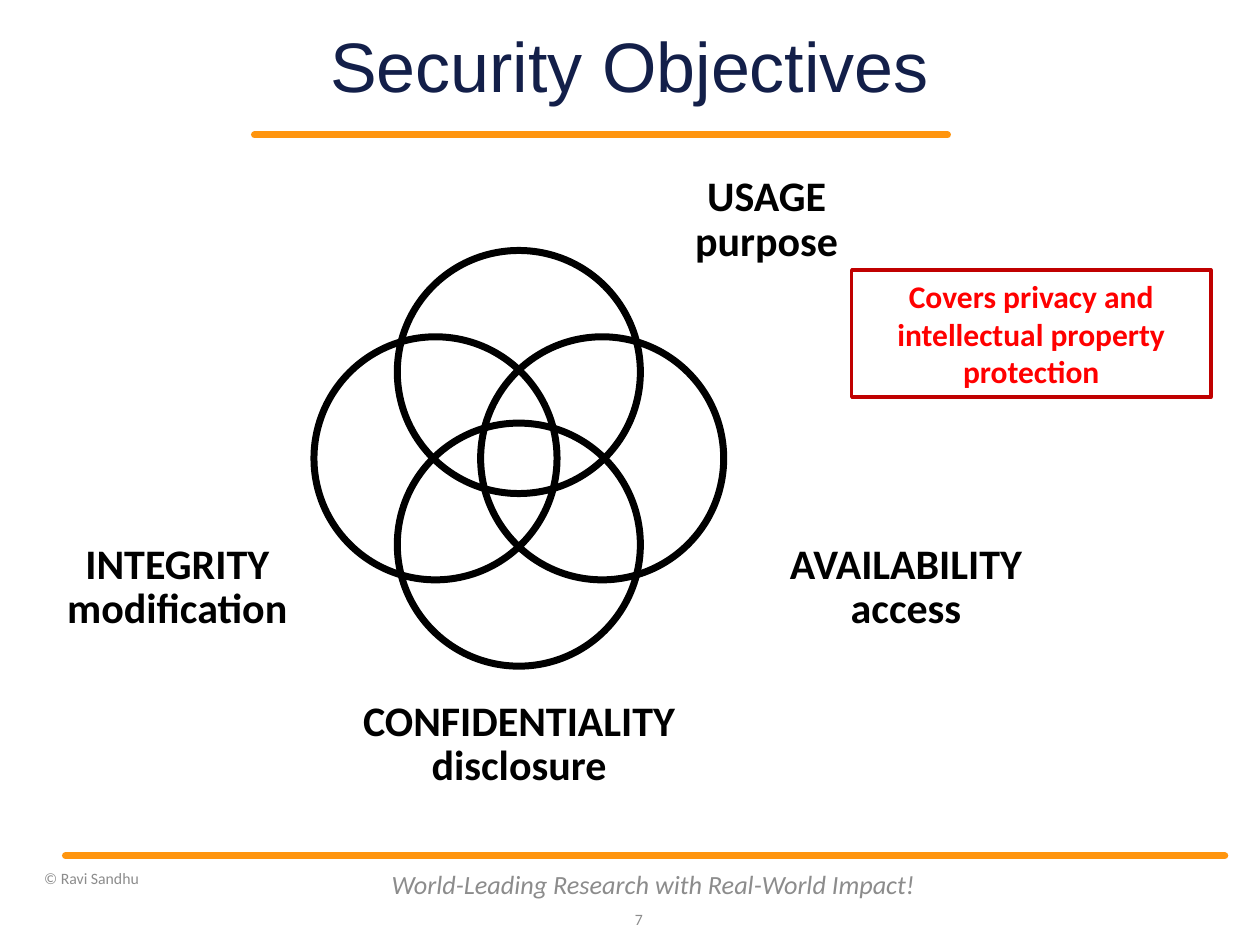
from dataclasses import dataclass

from lxml.etree import SubElement
from pptx import Presentation
from pptx.dml.color import RGBColor as Color
from pptx.enum.shapes import MSO_CONNECTOR as Connector, MSO_SHAPE as Shape
from pptx.enum.text import MSO_ANCHOR as Anchor, PP_ALIGN as Align
from pptx.oxml.ns import qn
from pptx.util import Cm, Pt


@dataclass(frozen=True)
class Theme:
    navy: str = "131F49"
    orange: str = "FF950E"
    grey: str = "8C8C8C"
    black: str = "000000"
    red: str = "FF0000"
    border: str = "C00000"
    heading: str = "Arial"
    body: str = "Calibri"
    title_size: int = 40
    label_size: int = 24
    note_size: int = 18
    motto_size: int = 15
    footer_size: int = 9
    thick: int = 4
    thin: int = 2


THEME = Theme()


def apply(target, values):
    for name, value in values.items():
        setattr(target, name, value)


def lengths(*values):
    return [Cm(value) for value in values]


def style_line(line, color, width):
    line.color.rgb = Color.from_string(color)
    line.width = Pt(width)


def write(shape, lines, color, size, font=THEME.body, align=Align.CENTER,
          spacing=1.0, insets=(0.25, 0.13), wrap=True, anchor=Anchor.MIDDLE,
          **styles):
    frame = shape.text_frame
    side, edge = lengths(*insets)
    apply(frame, {
        "margin_left": side, "margin_right": side,
        "margin_top": edge, "margin_bottom": edge,
        "word_wrap": wrap, "vertical_anchor": anchor,
    })
    for index, text in enumerate(lines):
        para = frame.add_paragraph() if index else frame.paragraphs[0]
        apply(para, {"alignment": align, "line_spacing": spacing})
        span = para.add_run()
        span.text = text
        apply(span.font, {"name": font, "size": Pt(size), **styles})
        span.font.color.rgb = Color.from_string(color)


def add_text(page, place, lines, color, size, **options):
    box = page.shapes.add_textbox(*lengths(*place))
    write(box, lines, color, size, **options)


def add_label(page, place, lines, spacing=0.87, insets=(0.18, 0.08)):
    add_text(page, place, lines, THEME.black, THEME.label_size, spacing=spacing,
             insets=insets, wrap=False, anchor=Anchor.TOP, bold=True)


def add_rule(page, left, right, top):
    rule = page.shapes.add_connector(Connector.STRAIGHT,
                                     *lengths(left, top, right, top))
    style_line(rule.line, THEME.orange, THEME.thick)
    rule.line._get_or_add_ln().set("cap", "rnd")
    SubElement(rule._element.spPr, qn("a:effectLst"))


def add_outline(page, kind, place, color, width):
    shape = page.shapes.add_shape(kind, *lengths(*place))
    shape.shadow.inherit = False
    shape.fill.background()
    style_line(shape.line, color, width)
    return shape


def add_circles(page, center_x, center_y, reach_x, reach_y, diameter):
    for step_x, step_y in ((1, 0), (-1, 0), (0, 1), (0, -1)):
        left = center_x + step_x * reach_x - diameter / 2
        top = center_y + step_y * reach_y - diameter / 2
        add_outline(page, Shape.OVAL, (left, top, diameter, diameter),
                    THEME.black, THEME.thick)


def add_note(page, place, text):
    note = add_outline(page, Shape.RECTANGLE, place, THEME.border, THEME.thin)
    write(note, [text], THEME.red, THEME.note_size, bold=True)


def add_footer(page):
    add_rule(page, 1.32, 24.69, 17.25)
    add_text(page, (7.62, 17.32, 11.1, 1.02),
             ["World-Leading Research with Real-World Impact!"],
             THEME.grey, THEME.motto_size, italic=True)
    add_text(page, (12.19, 18.03, 1.02, 1.02), ["7"],
             THEME.grey, THEME.footer_size, align=Align.RIGHT)
    add_text(page, (0.64, 17.25, 6.98, 0.91), ["© Ravi Sandhu"],
             THEME.grey, THEME.footer_size, align=Align.LEFT)


def main():
    deck = Presentation()
    apply(deck, {"slide_width": Cm(25.4), "slide_height": Cm(19.05)})
    page = deck.slides.add_slide(deck.slide_layouts[6])

    add_rule(page, 5.13, 19.1, 2.72)
    add_text(page, (6.02, 0.76, 13.34, 1.3), ["Security Objectives"],
             THEME.navy, THEME.title_size, font=THEME.heading,
             spacing=0.9, insets=(0, 0))
    add_circles(page, 10.46, 9.24, 1.68, 1.74, 4.9)
    add_label(page, (0.97, 10.9, 5.21, 1.9), ["INTEGRITY", "modification"])
    add_label(page, (14.94, 10.9, 6.65, 1.9), ["AVAILABILITY", "access"])
    add_label(page, (6.25, 14.07, 8.43, 1.9), ["CONFIDENTIALITY", "disclosure"])
    add_label(page, (13.74, 3.4, 3.43, 2.08), ["USAGE", "purpose"],
              spacing=0.9, insets=(0.25, 0.13))
    add_note(page, (17.17, 5.44, 7.24, 2.57),
             "Covers privacy and intellectual property protection")
    add_footer(page)
    deck.save("out.pptx")


if __name__ == "__main__":
    main()
